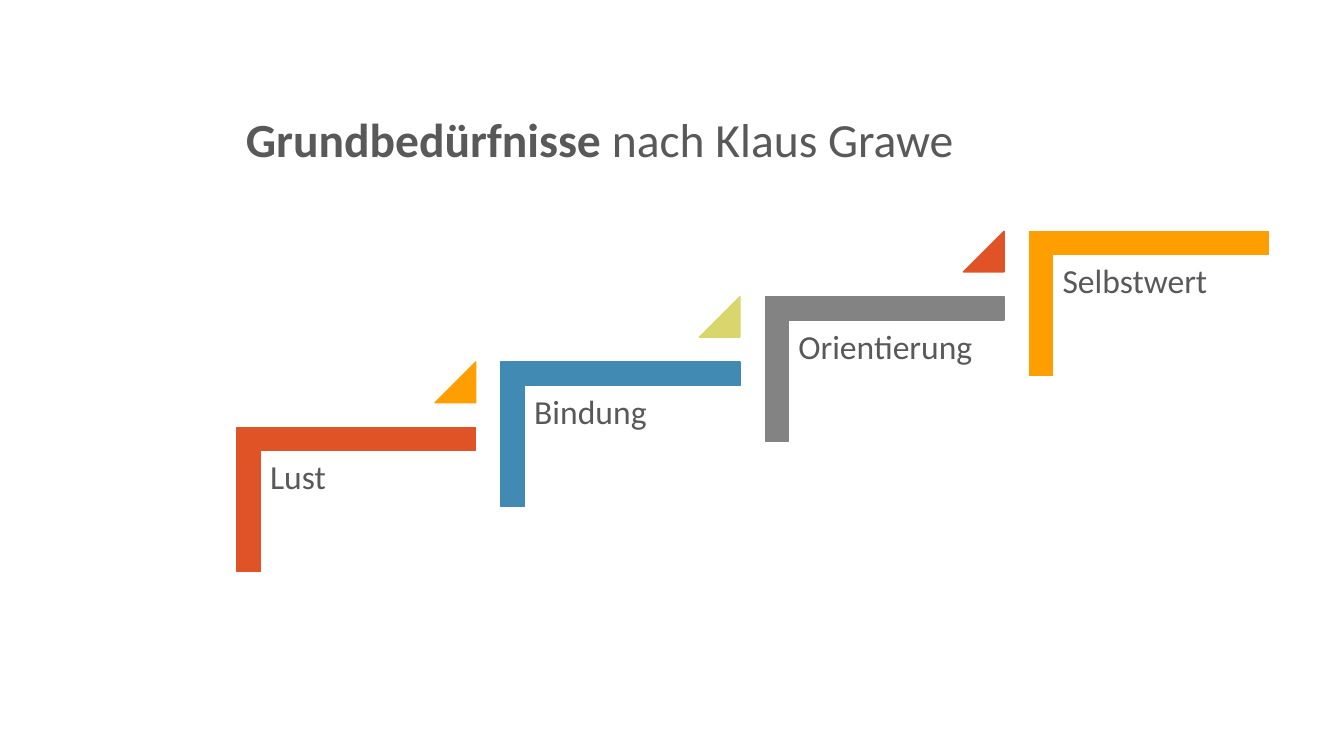
from pptx import Presentation
from pptx.dml.color import RGBColor
from pptx.enum.shapes import MSO_SHAPE as Shape
from pptx.enum.text import MSO_ANCHOR as Anchor, PP_ALIGN as Align
from pptx.util import Pt

COLORS = {
    "text": "595959",
    "red": "DF5327",
    "blue": "418AB3",
    "gray": "838383",
    "orange": "FE9E00",
    "lime": "D9D66D",
}
FONT = "Calibri"

# Need, colour of its step, colour of the triangle leading to the next one
NEEDS = [
    ("Lust", "red", "orange"),
    ("Bindung", "blue", "lime"),
    ("Orientierung", "gray", "red"),
    ("Selbstwert", "orange", None),
]
STEP_WIDTH, STEP_HEIGHT = 170.6, 103
RUN, RISE = 188.7, 46.7
TRIANGLE = 29


def color(name):
    return RGBColor.from_string(COLORS[name])


def add_run(paragraph, text, size, bold=False):
    run = paragraph.add_run()
    run.text = text
    run.font.name = FONT
    run.font.size = Pt(size)
    run.font.bold = bold
    run.font.color.rgb = color("text")


def add_solid(slide, preset, left, top, width, height, fill):
    solid = slide.shapes.add_shape(preset, Pt(left), Pt(top), Pt(width), Pt(height))
    solid.shadow.inherit = False
    solid.fill.solid()
    solid.fill.fore_color.rgb = color(fill)
    solid.line.color.rgb = color(fill)
    solid.line.width = Pt(1)
    return solid


def add_heading(slide, left, top, width, height):
    heading = slide.shapes.title
    heading.left, heading.top = Pt(left), Pt(top)
    heading.width, heading.height = Pt(width), Pt(height)
    heading.text_frame.vertical_anchor = Anchor.BOTTOM
    line = heading.text_frame.paragraphs[0]
    line.alignment = Align.LEFT
    line.line_spacing = 0.9
    add_run(line, "Grundbedürfnisse", 34, bold=True)
    add_run(line, " nach Klaus Grawe", 34)


def add_step(slide, left, top, need, step_color, triangle_color):
    # Corner bracket: an upright shape turned a quarter about its centre
    shift = (STEP_WIDTH - STEP_HEIGHT) / 2
    bracket = add_solid(slide, Shape.CORNER, left + shift, top - shift,
                        STEP_HEIGHT, STEP_WIDTH, step_color)
    bracket.rotation = 90
    bracket.adjustments[0] = bracket.adjustments[1] = 0.161

    # Label inside the bracket
    label = slide.shapes.add_textbox(Pt(left + 16.6), Pt(top + 16.6), Pt(154), Pt(135.4))
    frame = label.text_frame
    frame.word_wrap = True
    frame.margin_left = frame.margin_right = Pt(7.2)
    frame.margin_top = frame.margin_bottom = Pt(7.2)
    frame.paragraphs[0].line_spacing = 0.9
    add_run(frame.paragraphs[0], need, 24)

    # Triangle level with the top of the next step
    if triangle_color:
        triangle = add_solid(slide, Shape.ISOSCELES_TRIANGLE,
                             left + STEP_WIDTH - TRIANGLE, top - RISE,
                             TRIANGLE, TRIANGLE, triangle_color)
        triangle.adjustments[0] = 1


def add_staircase(slide, left, top):
    for index, need in enumerate(NEEDS):
        add_step(slide, left + index * RUN, top - index * RISE, *need)


def main():
    deck = Presentation()
    deck.slide_width, deck.slide_height = Pt(960), Pt(540)
    slide = deck.slides.add_slide(deck.slide_layouts[5])
    add_heading(slide, 168.5, 67, 588.2, 56.2)
    add_staircase(slide, 169.2, 305.3)
    deck.save("out.pptx")


if __name__ == "__main__":
    main()
